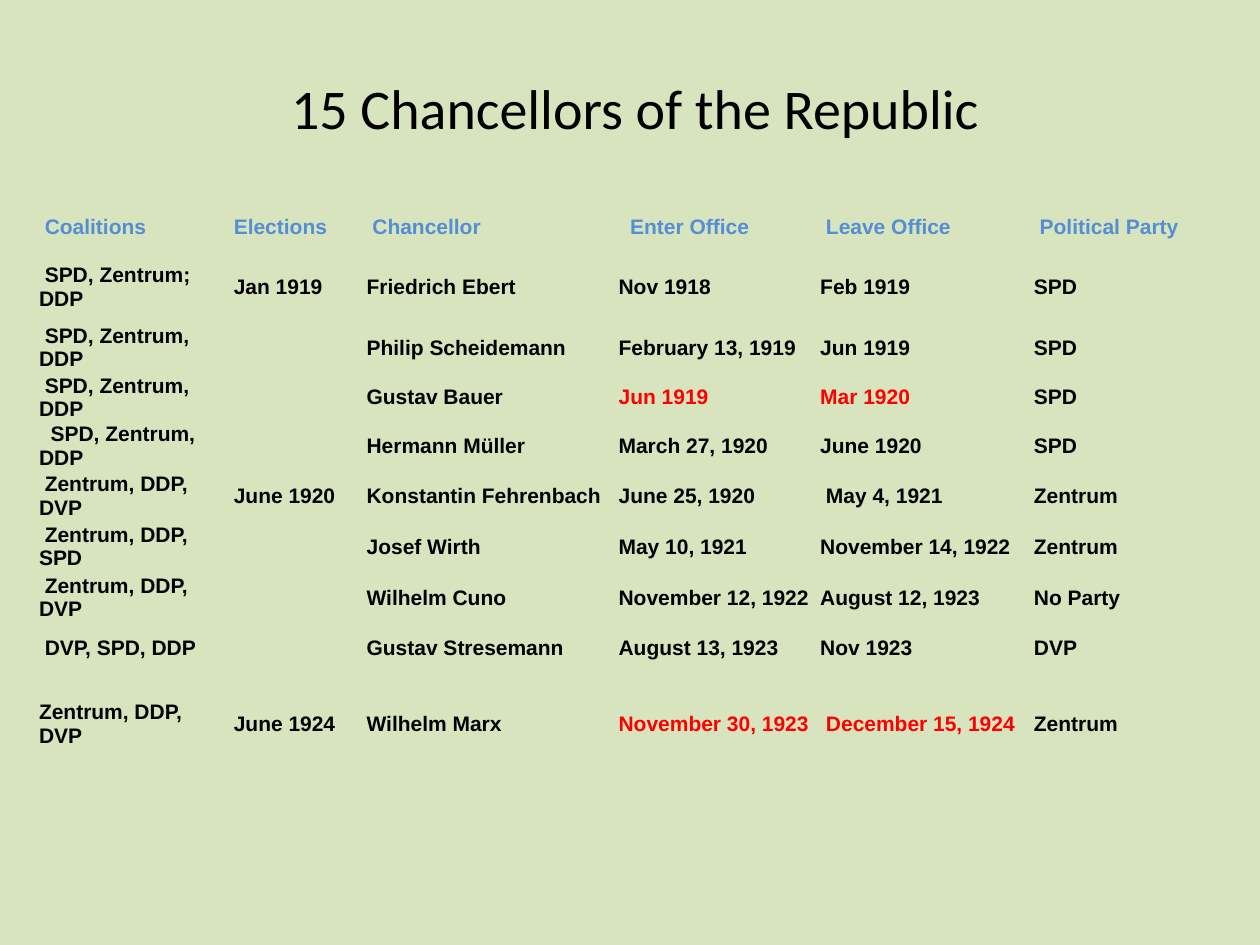
import pptx
import pptx.util
import pptx.dml.color
import pptx.enum.text

Inch = pptx.util.Inches
Align = pptx.enum.text.PP_ALIGN
Anchor = pptx.enum.text.MSO_ANCHOR
HUES = {"back": "D7E4BD", "head": "558ED5", "text": "000000", "mark": "FF0000"}
PLAIN = "{2D5ABB26-0587-4C30-8999-92F81FD0307C}"  # table style without grid
STEP = 3.3  # points of first-line indent for each leading space


def write(frame, text, size=12, font="Arial", hue="text", bold=False):
    """Fill a text frame; leading spaces become a first-line indent."""
    words = text.lstrip()
    para = frame.paragraphs[0]
    para.alignment = Align.LEFT
    props = para._p.get_or_add_pPr()
    props.set("marL", "0")
    props.set("indent", str(pptx.util.Pt(STEP * (len(text) - len(words)))))
    run = para.add_run()
    run.text = words
    run.font.size = pptx.util.Pt(size)
    run.font.name = font
    run.font.bold = bold
    run.font.color.rgb = pptx.dml.color.RGBColor.from_string(HUES[hue])


deck = pptx.Presentation()
deck.slide_width, deck.slide_height = Inch(10), Inch(7.5)
slide = deck.slides.add_slide(deck.slide_layouts[5])

# Background
fill = slide.background.fill
fill.solid()
fill.fore_color.rgb = pptx.dml.color.RGBColor.from_string(HUES["back"])

# Title
title = slide.shapes.title
title.left, title.top = Inch(2.21), Inch(0.53)
title.width, title.height = Inch(6.98), Inch(0.64)
frame = title.text_frame
frame.word_wrap = True
frame.auto_size = pptx.enum.text.MSO_AUTO_SIZE.NONE
frame.vertical_anchor = Anchor.TOP
write(frame, "15 Chancellors of the Republic", size=32, font="Calibri")

# Table content
ROWS = [
    (" Coalitions", " Elections", " Chancellor", "  Enter Office",
     " Leave Office", "  Political Party"),
    (" SPD, Zentrum; DDP", " Jan 1919", "Friedrich Ebert", "Nov 1918",
     "Feb 1919", " SPD"),
    (" SPD, Zentrum, DDP", "", "Philip Scheidemann", "February 13, 1919",
     "Jun 1919", " SPD"),
    (" SPD, Zentrum, DDP", "", "Gustav Bauer", "Jun 1919", "Mar 1920", " SPD"),
    ("  SPD, Zentrum, DDP", "", "Hermann Müller", "March 27, 1920",
     "June 1920", " SPD"),
    (" Zentrum, DDP, DVP", " June 1920", "Konstantin Fehrenbach",
     "June 25, 1920", " May 4, 1921", " Zentrum"),
    (" Zentrum, DDP, SPD", "", "Josef Wirth", "May 10, 1921",
     "November 14, 1922", " Zentrum"),
    (" Zentrum, DDP, DVP", "", "Wilhelm Cuno", "November 12, 1922",
     "August 12, 1923", " No Party"),
    (" DVP, SPD, DDP", "", "Gustav Stresemann", "August 13, 1923",
     "Nov 1923", " DVP"),
    ("Zentrum, DDP, DVP", " June 1924", "Wilhelm Marx", "November 30, 1923",
     " December 15, 1924", " Zentrum"),
]
WIDE = [1.5, 1.1, 2, 1.6, 1.65, 1.54]
HIGH = [0.39, 0.56, 0.4, 0.39, 0.38, 0.42, 0.38, 0.43, 0.37, 0.84]
MARKS = {(3, 3), (3, 4), (9, 3), (9, 4)}  # row and column of red dates

# Table grid
shape = slide.shapes.add_table(len(ROWS), len(WIDE), Inch(0.31), Inch(1.61),
                               Inch(sum(WIDE)), Inch(sum(HIGH)))
table = shape.table
table.first_row = table.horz_banding = False
table._tbl.tblPr[0].text = PLAIN
for col, width in zip(table.columns, WIDE):
    col.width = Inch(width)
for row, height in zip(table.rows, HIGH):
    row.height = Inch(height)

# Table cells
for r, texts in enumerate(ROWS):
    for c, text in enumerate(texts):
        cell = table.cell(r, c)
        cell.fill.background()
        cell.vertical_anchor = Anchor.MIDDLE
        cell.margin_left = cell.margin_right = 0
        cell.margin_top = cell.margin_bottom = 0
        if text:
            hue = "head" if r == 0 else "mark" if (r, c) in MARKS else "text"
            write(cell.text_frame, text, hue=hue, bold=True)

deck.save("out.pptx")
